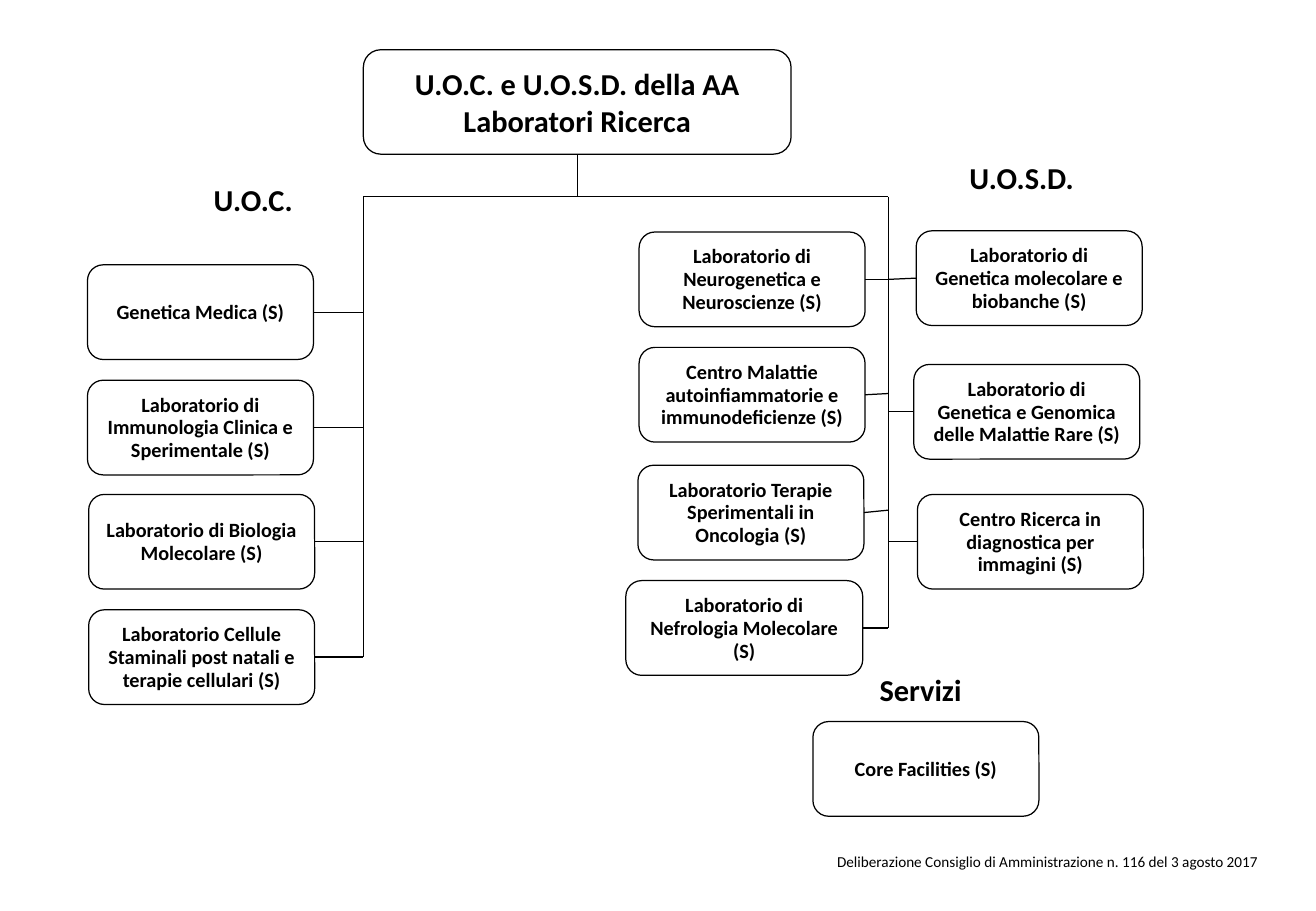
from pptx import Presentation
from pptx.dml.color import RGBColor
from pptx.enum.shapes import MSO_CONNECTOR as Wire, MSO_SHAPE as Kind
from pptx.enum.text import MSO_ANCHOR as Anchor, MSO_AUTO_SIZE as Fit, PP_ALIGN as Align
from pptx.oxml.ns import qn
from pptx.util import Inches, Pt
from lxml import etree

BLACK, WHITE = "000000", "FFFFFF"
WIDE, HIGH = 1.86, 0.78
TOP, LEFT, RIGHT = 1.62, 2.99, 7.31
UOC = [
    (0.72, 2.18, WIDE, "Genetica Medica (S)", 0),
    (0.72, 3.13, WIDE, "Laboratorio di Immunologia Clinica e Sperimentale (S)", 0),
    (0.73, 4.07, WIDE, "Laboratorio di Biologia Molecolare (S)", 0),
    (0.73, 5.02, WIDE, "Laboratorio Cellule Staminali post natali e terapie cellulari (S)", 0),
]
UOSD = [
    (5.26, 1.91, WIDE, "Laboratorio di Neurogenetica e Neuroscienze (S)", 0),
    (5.26, 2.86, WIDE, "Centro Malattie autoinfiammatorie e immunodeficienze (S)", -0.01),
    (5.25, 3.83, WIDE, "Laboratorio Terapie Sperimentali in Oncologia (S)", -0.02),
    (7.54, 1.9, WIDE, "Laboratorio di Genetica molecolare e biobanche (S)", 0.01),
    (7.52, 3, WIDE, "Laboratorio di Genetica e Genomica delle Malattie Rare (S)", 0),
    (7.55, 4.07, WIDE, "Centro Ricerca in diagnostica per immagini (S)", 0),
    (5.15, 4.78, 1.95, "Laboratorio di Nefrologia Molecolare (S)", 0),
]


def color(code):
    """Turn a hex string into a colour."""
    return RGBColor.from_string(code)


def write(frame, text, size, bold=True, align=Align.LEFT, space=None):
    """Fill a text frame and format its runs."""
    frame.text = text
    for para in frame.paragraphs:
        para.alignment = align
        para.line_spacing = space
        for run in para.runs:
            run.font.name = "Calibri"
            run.font.size = Pt(size)
            run.font.bold = bold
            run.font.color.rgb = color(BLACK)


def label(slide, x, y, w, h, text, size=18, bold=True):
    """Place a line of free text."""
    box = slide.shapes.add_textbox(Inches(x), Inches(y), Inches(w), Inches(h))
    box.text_frame.word_wrap = False
    write(box.text_frame, text, size, bold)


def frame(slide, x, y, w, h):
    """Draw an empty rounded box."""
    box = slide.shapes.add_shape(Kind.ROUNDED_RECTANGLE, Inches(x), Inches(y), Inches(w), Inches(h))
    box.shadow.inherit = False
    box.fill.solid()
    box.fill.fore_color.rgb = color(WHITE)
    box.line.color.rgb = color(BLACK)
    box.line.width = Pt(0.75)
    return box


def unit(slide, x, y, w, text):
    """Draw a rounded box that names one unit."""
    body = frame(slide, x, y, w, HIGH).text_frame
    body.word_wrap = True
    body.vertical_anchor = Anchor.MIDDLE
    write(body, text, 12, align=Align.CENTER, space=Pt(13.5))


def link(slide, x, y, to_x, to_y):
    """Draw a thin black line."""
    line = slide.shapes.add_connector(Wire.STRAIGHT, Inches(x), Inches(y), Inches(to_x), Inches(to_y))
    line.line.color.rgb = color(BLACK)
    line.line.width = Pt(0.75)
    etree.SubElement(line._element.spPr, qn("a:effectLst"))


def head(slide, x, y, w, h):
    """Draw the title box and the lines to both trunks."""
    frame(slide, x, y, w, h)
    title = slide.shapes.title
    title.left, title.top, title.width, title.height = map(Inches, (x, y, w, h))
    body = title.text_frame
    body.word_wrap = True
    body.auto_size = Fit.NONE
    body.vertical_anchor = Anchor.MIDDLE
    write(body, "U.O.C. e U.O.S.D. della AA\nLaboratori Ricerca", 18, align=Align.CENTER, space=1.0)
    slide.shapes._spTree.append(title._element)
    mid = x + w / 2
    link(slide, mid, y + h, mid, TOP)
    link(slide, LEFT, TOP, RIGHT, TOP)


def branch(slide, trunk, units):
    """Draw a trunk and the units that hang from it."""
    for x, y, w, text, shift in units:
        unit(slide, x, y, w, text)
        mid = y + HIGH / 2
        edge = x + w if x < trunk else x
        link(slide, edge, mid, trunk, mid + shift)
    link(slide, trunk, TOP, trunk, mid)


def main():
    """Build the chart and save it."""
    deck = Presentation()
    deck.slide_width, deck.slide_height = Inches(10.83), Inches(7.5)
    slide = deck.slides.add_slide(deck.slide_layouts[5])
    head(slide, LEFT, 0.41, 3.52, 0.86)
    label(slide, 1.66, 1.44, 0.86, 0.4, "U.O.C.")
    branch(slide, LEFT, UOC)
    label(slide, 7.88, 1.26, 1.07, 0.4, "U.O.S.D.")
    branch(slide, RIGHT, UOSD)
    label(slide, 7.14, 5.48, 0.94, 0.4, "Servizi")
    unit(slide, 6.69, 5.94, WIDE, "Core Facilities (S)")
    note = "Deliberazione Consiglio di Amministrazione n. 116 del 3 agosto 2017"
    label(slide, 6.79, 6.97, 3.78, 0.25, note, 9, False)
    deck.save("out.pptx")


if __name__ == "__main__":
    main()
